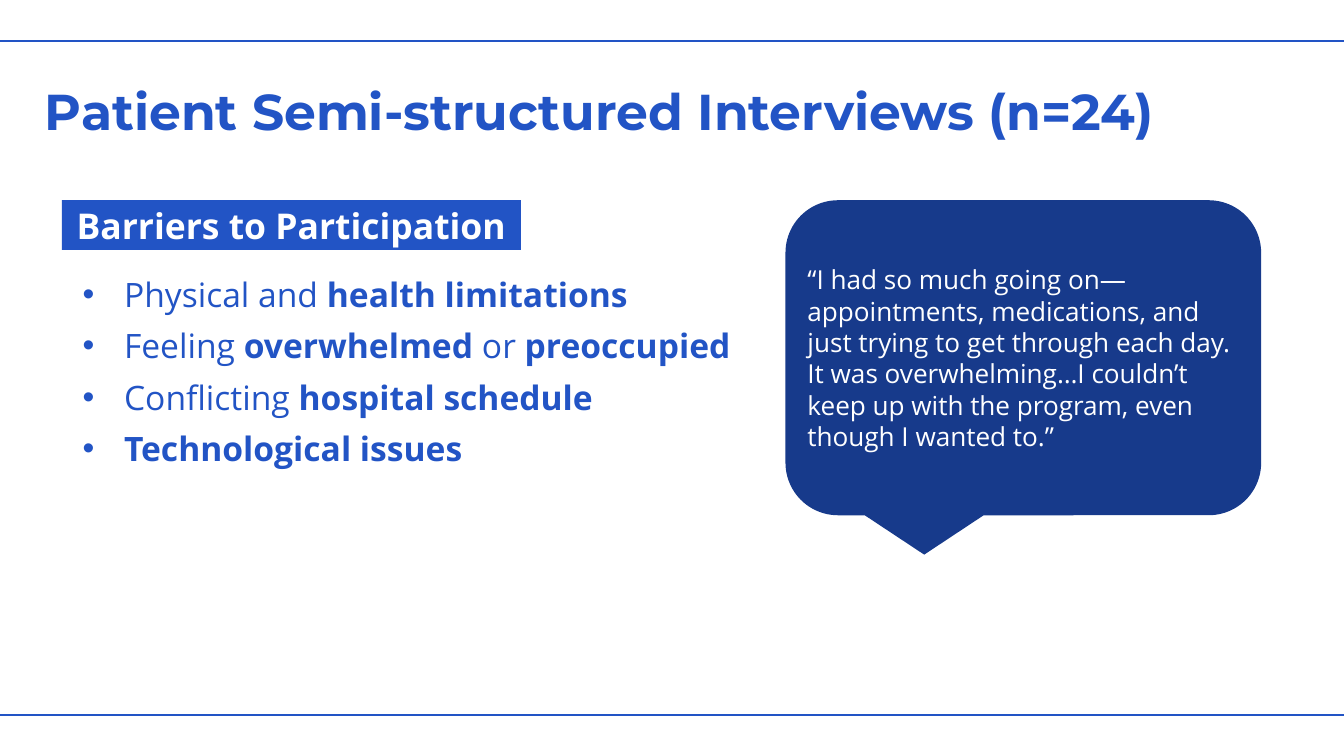
from lxml import etree
from pptx import Presentation
from pptx.dml.color import RGBColor
from pptx.enum import shapes, text
from pptx.oxml import ns
from pptx.util import Cm, Pt

COLORS = {"blue": "2254C5", "navy": "173A8B", "white": "FFFFFF"}
BODY_FONT = "Open Sans"

TITLE = "Patient Semi-structured Interviews (n=24)"
HEADING = "Barriers to Participation"
BARRIERS = [
    [("Physical and ", False), ("health limitations", True)],
    [("Feeling", False), (" overwhelmed ", True), ("or", False), (" preoccupied", True)],
    [("Conflicting", False), (" hospital schedule", True)],
    [("Technological issues", True)],
]
QUOTE = (
    "“I had so much going on—appointments, medications, and just trying to get "
    "through each day. It was overwhelming…I couldn’t keep up with the program, "
    "even though I wanted to.”"
)

WIDTH, HEIGHT = 50.8, 28.58
RULE_HEIGHTS = [1.55, 27.03]
CONTENT_TOP = 7.57


def color(name):
    return RGBColor.from_string(COLORS[name])


def style(paragraph, size, color_name, font=BODY_FONT, bold=None):
    paragraph.font.name = font
    paragraph.font.size = Pt(size)
    paragraph.font.bold = bold
    paragraph.font.color.rgb = color(color_name)


def add_rule(slide, y):
    rule = slide.shapes.add_connector(
        shapes.MSO_CONNECTOR.STRAIGHT, 0, Cm(y), Cm(WIDTH), Cm(y))
    rule.line.color.rgb = color("blue")
    rule.line.width = Pt(3)
    etree.SubElement(rule._element.spPr, ns.qn("a:effectLst"))


def add_text_frame(slide, left, top, width, height):
    box = slide.shapes.add_textbox(Cm(left), Cm(top), Cm(width), Cm(height))
    frame = box.text_frame
    frame.word_wrap = True
    frame.margin_left = frame.margin_right = frame.margin_top = frame.margin_bottom = 0
    return frame


def add_panel(slide, kind, left, width, height, fill, words, size, align, bold=None):
    panel = slide.shapes.add_shape(
        kind, Cm(left), Cm(CONTENT_TOP), Cm(width), Cm(height))
    panel.shadow.inherit = False
    panel.fill.solid()
    panel.fill.fore_color.rgb = color(fill)
    panel.line.fill.background()
    frame = panel.text_frame
    frame.word_wrap = True
    frame.vertical_anchor = text.MSO_ANCHOR.MIDDLE
    paragraph = frame.paragraphs[0]
    paragraph.text = words
    paragraph.alignment = align
    style(paragraph, size, "white", bold=bold)


def add_bullet(paragraph):
    properties = paragraph._p.get_or_add_pPr()
    properties.set("marL", str(Cm(1.57)))
    properties.set("indent", str(-Cm(1.57)))
    font = etree.Element(ns.qn("a:buFont"), typeface="Arial")
    bullet = etree.Element(ns.qn("a:buChar"), char="•")
    defaults = properties.find(ns.qn("a:defRPr"))
    defaults.addprevious(font)
    defaults.addprevious(bullet)


def main():
    deck = Presentation()
    deck.slide_width, deck.slide_height = Cm(WIDTH), Cm(HEIGHT)
    slide = deck.slides.add_slide(deck.slide_layouts[6])

    for y in RULE_HEIGHTS:
        add_rule(slide, y)

    title = add_text_frame(slide, 1.7, 1.93, 46.79, 3.05).paragraphs[0]
    title.text = TITLE
    title.line_spacing = Pt(96)
    style(title, 54, "blue", "Montserrat", True)

    barriers = add_text_frame(slide, 3.12, 10.34, 26.87, 7.44)
    for index, parts in enumerate(BARRIERS):
        barrier = barriers.add_paragraph() if index else barriers.paragraphs[0]
        barrier.space_after = Pt(12)
        style(barrier, 36, "blue")
        add_bullet(barrier)
        for words, bold in parts:
            run = barrier.add_run()
            run.text = words
            run.font.bold = bold

    add_panel(slide, shapes.MSO_SHAPE.RECTANGLE, 2.34, 17.35, 1.88, "blue",
              HEADING, 38, text.PP_ALIGN.CENTER, True)
    add_panel(slide, shapes.MSO_SHAPE.ROUNDED_RECTANGULAR_CALLOUT, 29.69, 17.98, 11.91,
              "navy", QUOTE, 28, text.PP_ALIGN.LEFT)

    deck.save("out.pptx")


if __name__ == "__main__":
    main()
